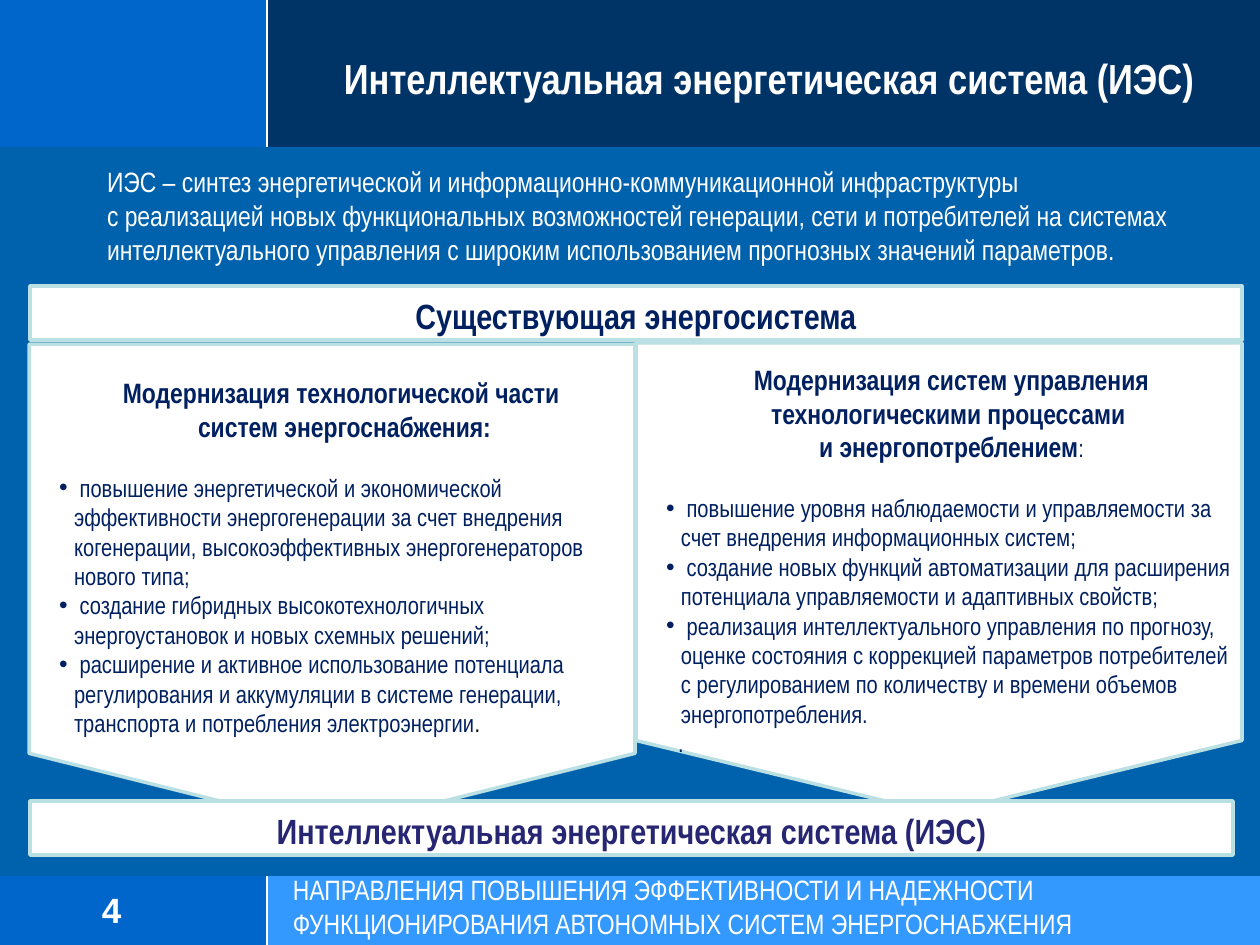
from lxml import etree
from pptx import Presentation
from pptx.dml.color import RGBColor
from pptx.enum.shapes import MSO_CONNECTOR, MSO_SHAPE
from pptx.enum.text import MSO_ANCHOR, PP_ALIGN
from pptx.oxml.ns import qn
from pptx.util import Emu, Pt

RECT, PLATE = MSO_SHAPE.RECTANGLE, MSO_SHAPE.PENTAGON
LEFT, MID = PP_ALIGN.LEFT, PP_ALIGN.CENTER
TOP, CENTER = MSO_ANCHOR.TOP, MSO_ANCHOR.MIDDLE
LINE = MSO_CONNECTOR.STRAIGHT
NARROW = "Arial Narrow"

COLORS = {
    "white": "FFFFFF", "blue": "0066CC", "sky": "3399FF", "navy": "003366",
    "back": "0062AC", "edge": "BBE0E3", "ink": "002060", "violet": "262673",
    "black": "000000",
}

# Content
TITLE = "Интеллектуальная энергетическая система (ИЭС)"
INTRO = ("ИЭС – синтез энергетической и информационно-коммуникационной "
         "инфраструктуры \vс реализацией новых функциональных возможностей "
         "генерации, сети и потребителей на системах интеллектуального "
         "управления с широким использованием прогнозных значений параметров.")
FOOTER = ("НАПРАВЛЕНИЯ ПОВЫШЕНИЯ ЭФФЕКТИВНОСТИ И НАДЕЖНОСТИ "
          "ФУНКЦИОНИРОВАНИЯ АВТОНОМНЫХ СИСТЕМ ЭНЕРГОСНАБЖЕНИЯ")
NUMBER = "4"

# Panels: box on the slide, insets, heading, its tail, bullets, end mark
PANELS = [
    {"box": (29, 344, 606, 485), "pads": (0, 5, 22, 30),
     "head": "Модернизация технологической части \vсистем энергоснабжения:",
     "tail": "",
     "items": [
         "повышение энергетической и экономической эффективности "
         "энергогенерации за счет внедрения когенерации, "
         "высокоэффективных энергогенераторов нового типа;",
         "создание гибридных высокотехнологичных энергоустановок "
         "и новых схемных решений;",
         "расширение и активное использование потенциала регулирования "
         "и аккумуляции в системе генерации, транспорта и потребления "
         "электроэнергии"],
     "stop": ".", "mark": ""},
    {"box": (636, 343, 606, 471), "pads": (0, 5, 0, 30),
     "head": "Модернизация систем управления технологическими процессами "
             "\vи энергопотреблением",
     "tail": ":",
     "items": [
         "повышение уровня наблюдаемости и управляемости за счет "
         "внедрения информационных систем;",
         "создание новых функций автоматизации для расширения "
         "потенциала управляемости и адаптивных свойств;",
         "реализация интеллектуального управления по прогнозу, оценке "
         "состояния с коррекцией параметров потребителей с регулированием "
         "по количеству и времени объемов энергопотребления."],
     "stop": "", "mark": "."},
]
BARS = [
    ((30, 286, 1212, 54), "Существующая энергосистема", "ink"),
    ((30, 801, 1203, 54), TITLE, "violet"),
]

# Frame of the slide
WIDE, HIGH, SPLIT, HEAD, FOOT = 1260, 945, 267, 149, 871
BANDS = [
    ((0, FOOT, SPLIT, HIGH - FOOT), "blue"),
    ((SPLIT, FOOT, WIDE - SPLIT, HIGH - FOOT), "sky"),
    ((0, 0, SPLIT, HEAD), "blue"),
    ((SPLIT, 0, WIDE - SPLIT, HEAD), "navy"),
]
RULES = [(SPLIT, FOOT, SPLIT, HIGH), (SPLIT, 0, SPLIT, HEAD),
         (0, HEAD, WIDE, HEAD)]
BODY = (0, 147, WIDE, 729)


def px(n):
    return Emu(round(n * 914400 / 126))


def color(name):
    return RGBColor.from_string(COLORS[name])


def add_block(box, fill, edge=None, kind=RECT):
    shape = slide.shapes.add_shape(kind, *map(px, box))
    shape.shadow.inherit = False
    shape.fill.solid()
    shape.fill.fore_color.rgb = color(fill)
    if edge:
        shape.line.color.rgb = color(edge)
        shape.line.width = Pt(2)
    else:
        shape.line.fill.background()
    return shape


def add_rule(ends):
    rule = slide.shapes.add_connector(LINE, *map(px, ends))
    rule.line.color.rgb = color("white")
    rule.line.width = Pt(1.25)
    etree.SubElement(rule._element.spPr, qn("a:effectLst"))


def set_frame(shape, anchor=TOP, pads=(13, 6, 13, 6)):
    frame = shape.text_frame
    frame.word_wrap = True
    frame.vertical_anchor = anchor
    (frame.margin_left, frame.margin_top,
     frame.margin_right, frame.margin_bottom) = map(px, pads)
    return frame


def add_run(para, text, size, tint, bold=False, face=NARROW):
    for i, part in enumerate(text.split("\v")):
        if i:
            para.add_line_break()
        run = para.add_run()
        run.text = part
        run.font.size = Pt(size)
        run.font.name = face
        run.font.bold = bold
        run.font.color.rgb = color(tint)


def add_label(box, text, size, bold=False, face=NARROW, align=LEFT, **look):
    frame = set_frame(slide.shapes.add_textbox(*map(px, box)), **look)
    para = frame.paragraphs[0]
    para.alignment = align
    add_run(para, text, size, "white", bold, face)


def add_item(frame, left, hang, bullet):
    para = frame.add_paragraph()
    para.alignment = LEFT
    props = para._p.get_or_add_pPr()
    props.set("marL", str(px(left)))
    props.set("indent", str(-px(hang)))
    if bullet:
        etree.SubElement(props, qn("a:buFont")).set("typeface", "Arial")
        etree.SubElement(props, qn("a:buChar")).set("char", "•")
    return para


def add_panel(panel):
    # A quarter turn points the plate down; the text is turned back
    x, y, w, h = panel["box"]
    shape = add_block((x + (w - h) / 2, y + (h - w) / 2, h, w),
                      "white", "edge", PLATE)
    shape.rotation = 90
    shape.adjustments[0] = 0.156
    frame = set_frame(shape, CENTER, panel["pads"])
    frame._txBody.bodyPr.set("vert", "vert270")
    head = frame.paragraphs[0]
    head.alignment = MID
    head.space_after = Pt(17)
    add_run(head, panel["head"], 16, "ink", True)
    if panel["tail"]:
        add_run(head, panel["tail"], 14, "ink")
    for text in panel["items"]:
        para = add_item(frame, 15, 15, True)
        add_run(para, " " + text, 14, "ink")
    if panel["stop"]:
        add_run(para, panel["stop"], 14, "black")
    if panel["mark"]:
        add_run(add_item(frame, 25, 13, False), panel["mark"], 14, "ink")


def add_bar(box, text, tint):
    para = set_frame(add_block(box, "white", "edge")).paragraphs[0]
    para.alignment = MID
    para.line_spacing = 1.07
    para.space_after = Pt(8)
    add_run(para, text, 20, tint, True)


deck = Presentation()
deck.slide_width, deck.slide_height = px(WIDE), px(HIGH)
slide = deck.slides.add_slide(deck.slide_layouts[6])

# Background bands and rules
for box, fill in BANDS:
    add_block(box, fill)
for ends in RULES:
    add_rule(ends)
add_block(BODY, "back")

# Number, title and intro
add_label((89, 882, 84, 55), NUMBER, 20, True, "Arial")
add_label((297, 24, 944, 107), TITLE, 24, True, align=MID,
          anchor=CENTER, pads=(0, 0, 0, 0))
add_label((94, 159, 1139, 115), INTRO, 16)

# Bars and panels
add_bar(*BARS[0])
for panel in PANELS:
    add_panel(panel)
add_bar(*BARS[1])

# Footer
add_label((280, 868, 955, 77), FOOTER, 16, anchor=CENTER)

deck.save("out.pptx")
